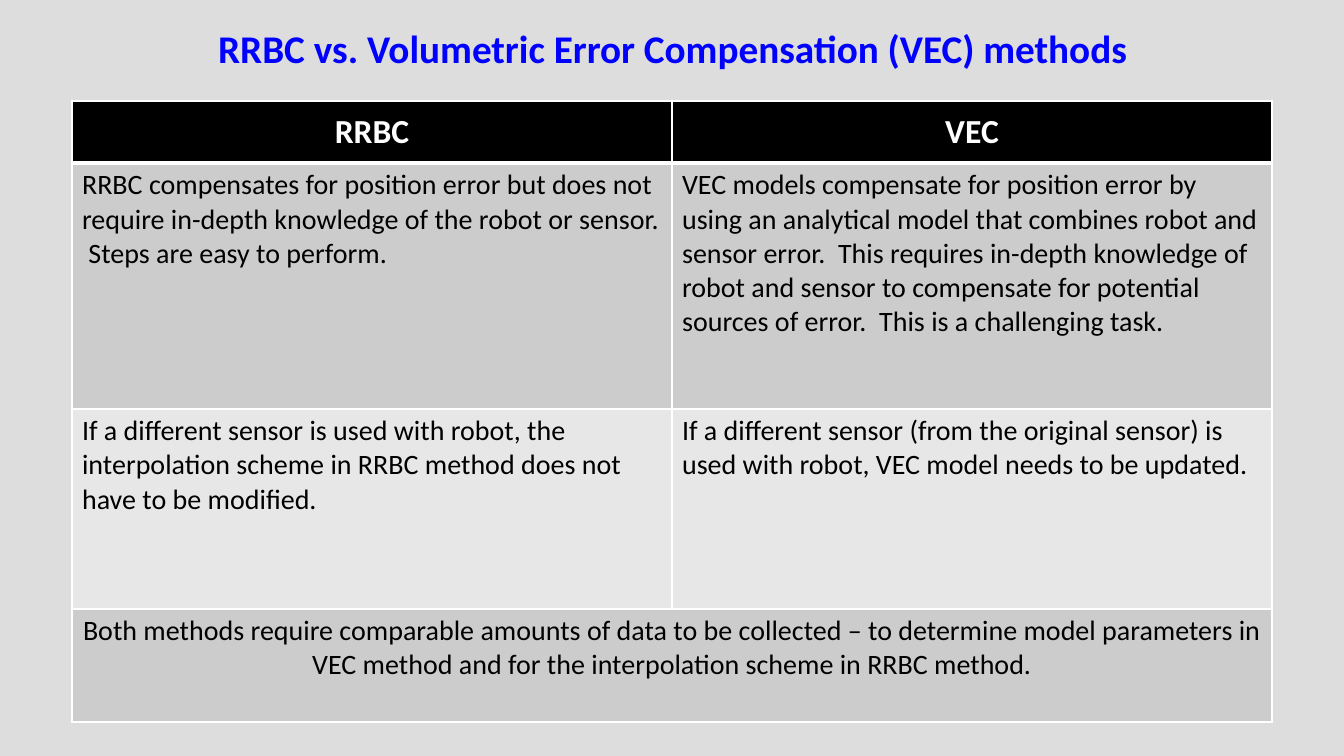
from lxml import etree
from pptx import Presentation
from pptx import util as u
from pptx.dml.color import RGBColor
from pptx.enum import text
from pptx.oxml import ns

EMU_PER_PX = 914400 / 100.8
COLUMNS = [600, 600]
ROWS = [62, 246, 200, 113]
FILLS = ["000000", "CCCCCC", "E7E7E7", "CCCCCC"]
TITLE = {"size": u.Pt(28), "bold": True, "color": "0000FF"}
HEADER = {"size": u.Pt(24), "bold": True, "color": "FFFFFF"}
BODY = {"size": u.Pt(20), "bold": False, "color": "000000"}
COMPARISON = [
    ["RRBC", "VEC"],
    ["RRBC compensates for position error but does not require in-depth "
     "knowledge of the robot or sensor.  Steps are easy to perform.",
     "VEC models compensate for position error by using an analytical model "
     "that combines robot and sensor error.  This requires in-depth knowledge "
     "of robot and sensor to compensate for potential sources of error.  "
     "This is a challenging task."],
    ["If a different sensor is used with robot, the interpolation scheme in "
     "RRBC method does not have to be modified.",
     "If a different sensor (from the original sensor) is used with robot, "
     "VEC model needs to be updated."],
    ["Both methods require comparable amounts of data to be collected – to "
     "determine model parameters in VEC method and for the interpolation "
     "scheme in RRBC method."],
]


def px(n):
    """Turn pixels into EMU."""
    return u.Emu(round(n * EMU_PER_PX))


def rgb(value):
    """Turn a hex string into a colour."""
    return RGBColor.from_string(value)


def write(tf, content, style, centred):
    """Write one formatted paragraph into a text frame."""
    tf.word_wrap = True
    p = tf.paragraphs[0]
    p.alignment = text.PP_ALIGN.CENTER if centred else text.PP_ALIGN.LEFT
    r = p.add_run()
    r.text = content
    r.font.name = "Calibri"
    for name, value in style.items():
        if name == "color":
            r.font.color.rgb = rgb(value)
        else:
            setattr(r.font, name, value)
    return p


def add_title(slide, content):
    """Add the centred slide heading."""
    tf = slide.shapes.add_textbox(px(93), px(18), px(1159), px(66)).text_frame
    p = write(tf, content, TITLE, True)
    p.line_spacing = 0.9
    tf.vertical_anchor = text.MSO_ANCHOR.MIDDLE


def set_borders(cell, widths):
    """Draw white borders with widths in points, keyed by side."""
    tc_pr = cell._tc.get_or_add_tcPr()
    for i, side in enumerate("LRTB"):
        ln = etree.Element(ns.qn(f"a:ln{side}"), w=str(u.Pt(widths.get(side, 1))))
        fill = etree.SubElement(ln, ns.qn("a:solidFill"))
        etree.SubElement(fill, ns.qn("a:srgbClr"), val="FFFFFF")
        tc_pr.insert(i, ln)


def add_comparison(slide, rows):
    """Add the comparison table with its merged closing row."""
    table = slide.shapes.add_table(
        len(ROWS), len(COLUMNS), px(72), px(101), px(sum(COLUMNS)), px(sum(ROWS))
    ).table
    for column, width in zip(table.columns, COLUMNS):
        column.width = px(width)
    for i, (row, height) in enumerate(zip(table.rows, ROWS)):
        row.height = px(height)
        for cell in row.cells:
            cell.fill.solid()
            cell.fill.fore_color.rgb = rgb(FILLS[i])
            set_borders(cell, {0: {"B": 3}, 1: {"T": 3}}.get(i, {}))
        if len(rows[i]) == 1:
            table.cell(i, 0).merge(table.cell(i, len(COLUMNS) - 1))
        for cell, content in zip(row.cells, rows[i]):
            header = i == 0
            write(cell.text_frame, content, HEADER if header else BODY,
                  header or cell.is_merge_origin)
            cell.vertical_anchor = (
                text.MSO_ANCHOR.MIDDLE if header else text.MSO_ANCHOR.TOP)


def main():
    """Build and save the slide."""
    prs = Presentation()
    prs.slide_width, prs.slide_height = px(1344), px(756)
    slide = prs.slides.add_slide(prs.slide_layouts[6])
    slide.background.fill.solid()
    slide.background.fill.fore_color.rgb = rgb("DDDDDD")
    add_title(slide, "RRBC vs. Volumetric Error Compensation (VEC) methods")
    add_comparison(slide, COMPARISON)
    prs.save("out.pptx")


if __name__ == "__main__":
    main()
